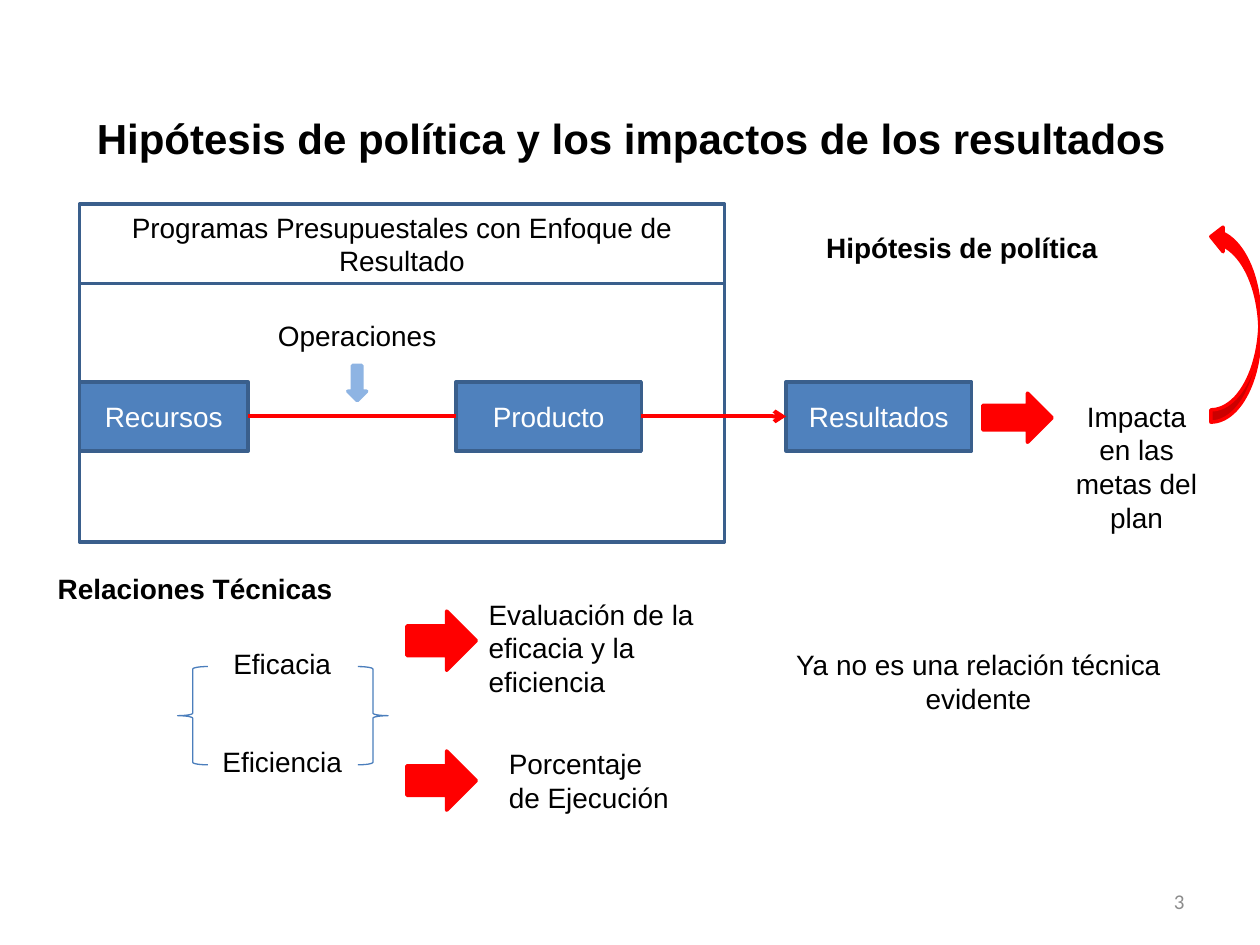
"""Build the slide on policy hypothesis and the impacts of results."""
from dataclasses import dataclass

from lxml import etree
from pptx import Presentation
from pptx import util as u
from pptx.dml import color
from pptx.enum import shapes, text
from pptx.oxml import ns


@dataclass(frozen=True)
class Theme:
    ink: str = "000000"
    white: str = "FFFFFF"
    blue: str = "4F81BD"
    edge: str = "3A5F8C"
    brace: str = "4B7EBC"
    pale: str = "8EB4E3"
    red: str = "FF0000"
    gray: str = "8C8C8C"
    font: str = "Arial"
    foot: str = "Calibri"
    title: int = 24
    body: int = 16
    small: int = 12


T = Theme()
KIND = shapes.MSO_SHAPE
LEFT, MID, RIGHT = text.PP_ALIGN.LEFT, text.PP_ALIGN.CENTER, text.PP_ALIGN.RIGHT
TOP, CORE = text.MSO_ANCHOR.TOP, text.MSO_ANCHOR.MIDDLE


def write(box, words, size=T.body, hue=T.ink, font=T.font, bold=False, align=MID, anchor=TOP):
    frame = box.text_frame
    frame.word_wrap = True
    frame.vertical_anchor = anchor
    par = frame.paragraphs[0]
    par.alignment = align
    run = par.add_run()
    run.text = words
    run.font.name, run.font.size, run.font.bold = font, u.Pt(size), bold
    run.font.color.rgb = color.RGBColor.from_string(hue)


def draw(kind, area, fill=None, line=T.edge, width=2, turn=0):
    item = slide.shapes.add_shape(kind, *map(u.Inches, area))
    item.shadow.inherit = False
    item.rotation = turn
    if fill:
        item.fill.solid()
        item.fill.fore_color.rgb = color.RGBColor.from_string(fill)
    else:
        item.fill.background()
    item.line.color.rgb = color.RGBColor.from_string(line)
    item.line.width = u.Pt(width)
    return item


deck = Presentation()
deck.slide_width, deck.slide_height = u.Inches(10), u.Inches(7.5)
slide = deck.slides.add_slide(deck.slide_layouts[6])

head = draw(KIND.RECTANGLE, (0.63, 1.62, 5.12, 0.63))
write(head, "Programas Presupuestales con Enfoque de Resultado", anchor=CORE)
draw(KIND.RECTANGLE, (0.63, 2.25, 5.12, 2.05))

steps = []
for words, left, width in (
    ("Recursos", 0.63, 1.34),
    ("Producto", 3.62, 1.47),
    ("Resultados", 6.24, 1.47),
):
    step = draw(KIND.RECTANGLE, (left, 3.03, width, 0.55), T.blue)
    write(step, words, hue=T.white, anchor=CORE)
    steps.append(step)

for start, end in zip(steps, steps[1:]):
    link = slide.shapes.add_connector(shapes.MSO_CONNECTOR.STRAIGHT, 0, 0, 0, 0)
    link.begin_connect(start, 3)
    link.end_connect(end, 1)
    link.line.color.rgb = color.RGBColor.from_string(T.red)
    link.line.width = u.Pt(2.25)
    etree.SubElement(link._element.spPr, ns.qn("a:effectLst"))
etree.SubElement(link.line._get_or_add_ln(), ns.qn("a:tailEnd"), type="arrow")

draw(KIND.DOWN_ARROW, (2.76, 2.9, 0.15, 0.28), T.pale, T.pale)
draw(KIND.RIGHT_ARROW, (7.8, 3.12, 0.55, 0.39), T.red, T.red)
for top in (4.81, 5.92):
    draw(KIND.DOWN_ARROW, (3.27, top, 0.47, 0.55), T.red, T.red, turn=270)
draw(KIND.CURVED_UP_ARROW, (9.02, 2.37, 1.57, 0.39), T.red, T.red, turn=270)
for kind, left in ((KIND.LEFT_BRACE, 1.41), (KIND.RIGHT_BRACE, 2.84)):
    draw(kind, (left, 5.29, 0.24, 0.78), line=T.brace, width=0.75)

for words, area, form in (
    ("Hipótesis de política y los impactos de los resultados", (0.67, 0.84, 8.82, 0.5),
     dict(size=T.title, bold=True, align=LEFT)),
    ("Operaciones", (2.05, 2.48, 1.57, 0.37), {}),
    ("Impacta en las metas del plan", (8.43, 3.12, 1.18, 1.18), {}),
    ("Relaciones Técnicas", (0.36, 4.49, 2.76, 0.37), dict(bold=True, align=LEFT)),
    ("Eficacia", (1.65, 5.08, 1.18, 0.37), {}),
    ("Eficiencia", (1.65, 5.86, 1.18, 0.37), {}),
    ("Evaluación de la eficacia y la eficiencia", (3.78, 4.69, 2.05, 0.91), dict(align=LEFT)),
    ("Porcentaje de Ejecución", (3.94, 5.88, 1.56, 0.64), dict(align=LEFT)),
    ("Hipótesis de política", (5.98, 1.78, 3.31, 0.37), dict(bold=True)),
    ("Ya no es una relación técnica evidente", (6.14, 5.09, 3.25, 0.64), {}),
    ("3", (7.17, 6.95, 2.33, 0.4),
     dict(size=T.small, hue=T.gray, font=T.foot, align=RIGHT, anchor=CORE)),
):
    write(slide.shapes.add_textbox(*map(u.Inches, area)), words, **form)

deck.save("out.pptx")
